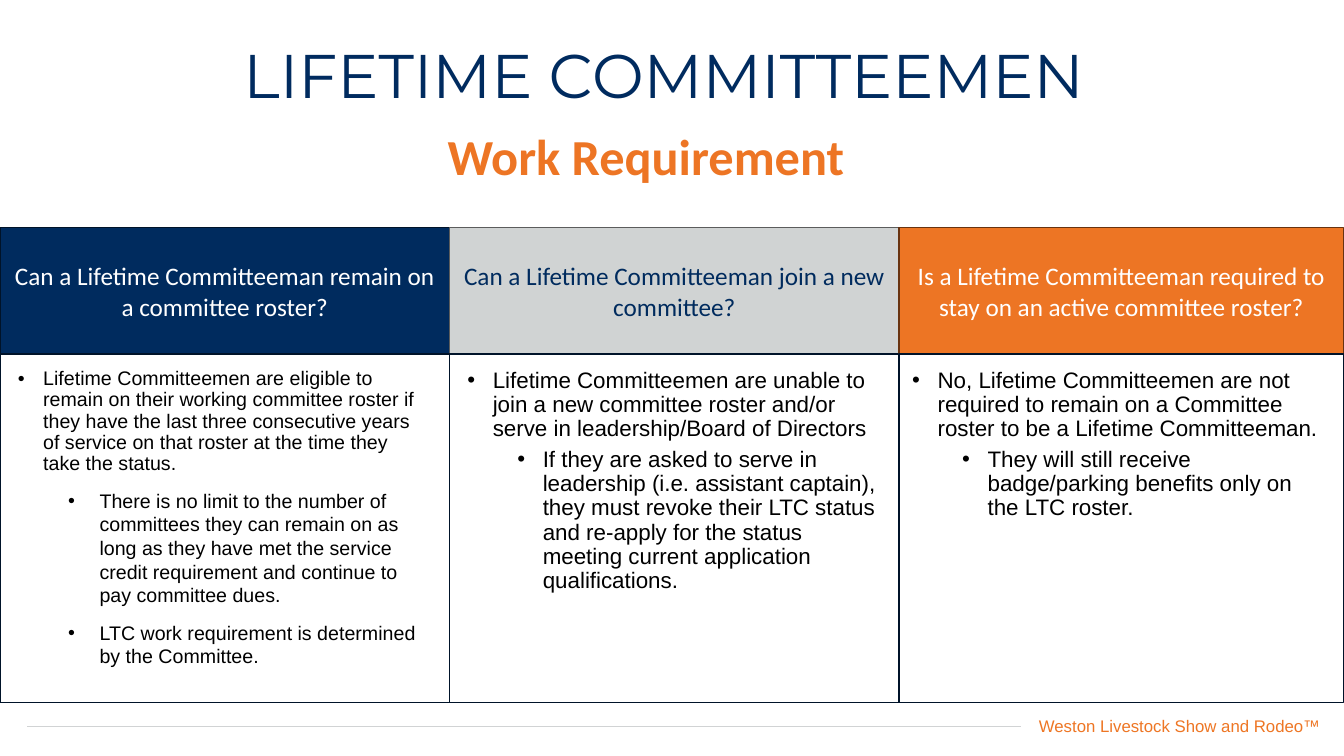
from lxml import etree
from pptx import Presentation
from pptx.dml.color import RGBColor
from pptx.enum.shapes import MSO_CONNECTOR as Connector, MSO_SHAPE as Shape
from pptx.enum.text import MSO_ANCHOR as Anchor, PP_ALIGN as Align
from pptx.oxml.ns import qn
from pptx.util import Cm, Pt

COLORS = {
    "navy": "002B5E", "title": "002B5F", "gray": "D0D3D3", "orange": "ED7524",
    "footer": "EE7624", "rule": "D1D3D4", "white": "FFFFFF", "black": "000000",
    "navy_edge": "001329", "gray_edge": "5B5C5C", "orange_edge": "683310",
}

HEADER_HEIGHT = 3.18
BODY_HEIGHT = 8.78
COLUMNS_TOP = 5.74
COLUMN_WIDTHS = (11.33, 11.33, 11.2)
TEXT_INSETS = (0.2, 0.2, 0.08)

COLUMNS = [
    {
        "header": "Can a Lifetime Committeeman remain on a committee roster?",
        "fill": "navy", "edge": "navy_edge", "color": "white",
        "size": 14, "indent": 2.06, "hanging": 0.79, "spacing": 1.0, "before": 10,
        "lead": "Lifetime Committeemen are eligible to remain on their working committee "
                "roster if they have the last three consecutive years of service on that "
                "roster at the time they take the status.",
        "details": [
            "There is no limit to the number of committees they can remain on as long as "
            "they have met the service credit requirement and continue to pay committee dues.",
            "LTC work requirement is determined by the Committee.",
        ],
    },
    {
        "header": "Can a Lifetime Committeeman join a new committee?",
        "fill": "gray", "edge": "gray_edge", "color": "navy",
        "size": 16, "indent": 1.9, "hanging": 0.64, "spacing": 0.9, "before": 5,
        "lead": "Lifetime Committeemen are unable to join a new committee roster and/or "
                "serve in leadership/Board of Directors",
        "details": [
            "If they are asked to serve in leadership (i.e. assistant captain), they must "
            "revoke their LTC status and re-apply for the status meeting current "
            "application qualifications.",
        ],
    },
    {
        "header": "Is a Lifetime Committeeman required to stay on an active committee roster?",
        "fill": "orange", "edge": "orange_edge", "color": "white",
        "size": 16, "indent": 1.9, "hanging": 0.64, "spacing": 0.9, "before": 5,
        "lead": "No, Lifetime Committeemen are not required to remain on a Committee "
                "roster to be a Lifetime Committeeman.",
        "details": [
            "They will still receive badge/parking benefits only on the LTC roster.",
        ],
    },
]


def rgb(name):
    return RGBColor.from_string(COLORS[name])


def write(paragraph, text, font, size, color, align=Align.LEFT, bold=False):
    paragraph.text = text
    paragraph.alignment = align
    paragraph.font.name = font
    paragraph.font.size = Pt(size)
    paragraph.font.bold = bold
    paragraph.font.color.rgb = rgb(color)


def add_text_frame(slide, left, top, width, height):
    box = slide.shapes.add_textbox(Cm(left), Cm(top), Cm(width), Cm(height))
    box.text_frame.word_wrap = True
    return box.text_frame


def add_rectangle(slide, left, top, width, height, edge, fill=None):
    shape = slide.shapes.add_shape(Shape.RECTANGLE, Cm(left), Cm(top), Cm(width), Cm(height))
    shape.shadow.inherit = False
    if fill:
        shape.fill.solid()
        shape.fill.fore_color.rgb = rgb(fill)
    else:
        shape.fill.background()
    shape.line.color.rgb = rgb(edge)
    shape.line.width = Pt(1)
    return shape


def set_bullet(paragraph, indent, hanging, spacing, before):
    paragraph.line_spacing = spacing
    paragraph.space_before = Pt(before)
    properties = paragraph._p.get_or_add_pPr()
    properties.set("marL", str(Cm(indent)))
    properties.set("indent", str(-Cm(hanging)))
    etree.SubElement(properties, qn("a:buFont")).set("typeface", "Arial")
    bullet = etree.SubElement(properties, qn("a:buChar"))
    bullet.set("char", "•")
    default_run = properties.find(qn("a:defRPr"))
    if default_run is not None:
        properties.append(default_run)


def add_heading(slide, left, top, width, height):
    title = add_text_frame(slide, left, top, width, height).paragraphs[0]
    write(title, "LIFETIME COMMITTEEMEN", "Montserrat", 44, "title", Align.CENTER)
    title.line_spacing = 0.9
    subtitle = add_text_frame(slide, left + 7.8, top + 2, 12.9, 1.8).paragraphs[0]
    write(subtitle, "Work Requirement", "Calibri", 36, "orange", Align.CENTER, bold=True)


def add_column(slide, column, left, top, width, inset):
    header = add_rectangle(slide, left, top, width, HEADER_HEIGHT, column["edge"], column["fill"])
    header.text_frame.word_wrap = True
    header.text_frame.vertical_anchor = Anchor.MIDDLE
    write(header.text_frame.paragraphs[0], column["header"], "Calibri", 18,
          column["color"], Align.CENTER)

    body_top = top + HEADER_HEIGHT
    add_rectangle(slide, left, body_top, width, BODY_HEIGHT, "navy_edge")
    frame = add_text_frame(slide, left + inset, body_top + 0.25, 10.87, BODY_HEIGHT - 0.5)
    lead = frame.paragraphs[0]
    write(lead, column["lead"], "Arial", column["size"], "black")
    set_bullet(lead, 0.64, 0.64, 0.9, 10)
    for text in column["details"]:
        detail = frame.add_paragraph()
        detail.level = 1
        write(detail, text, "Arial", column["size"], "black")
        set_bullet(detail, column["indent"], column["hanging"],
                   column["spacing"], column["before"])


def add_footer(slide, left, top, width, height):
    middle = top + 0.4
    rule = slide.shapes.add_connector(Connector.STRAIGHT, Cm(left), Cm(middle),
                                      Cm(left + 25.04), Cm(middle))
    rule.line.color.rgb = rgb("rule")
    rule.line.width = Pt(1)
    etree.SubElement(rule._element.spPr, qn("a:effectLst"))
    text_width = 16.03
    frame = add_text_frame(slide, left + width - text_width, top, text_width, height)
    write(frame.paragraphs[0], "Weston Livestock Show and Rodeo™", "Arial", 12,
          "footer", Align.RIGHT)


def main():
    presentation = Presentation()
    presentation.slide_width = Cm(33.87)
    presentation.slide_height = Cm(19.05)
    slide = presentation.slides.add_slide(presentation.slide_layouts[6])
    add_footer(slide, 0.69, 17.91, 32.84, 0.76)
    add_heading(slide, 2.03, 1.02, 29.41, 3.18)
    left = 0
    for column, width, inset in zip(COLUMNS, COLUMN_WIDTHS, TEXT_INSETS):
        add_column(slide, column, left, COLUMNS_TOP, width, inset)
        left += width
    presentation.save("out.pptx")


if __name__ == "__main__":
    main()
